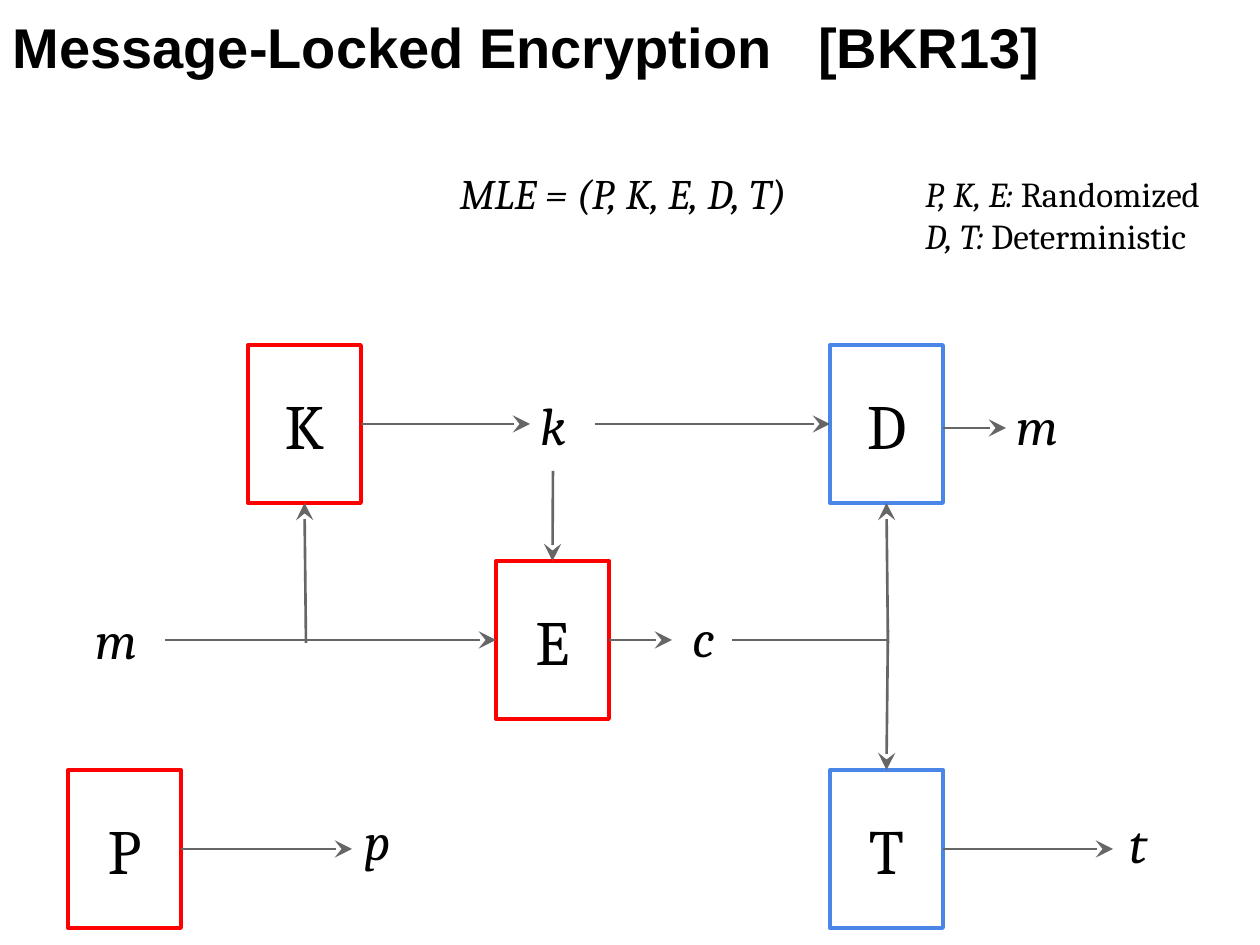
from lxml import etree
from pptx import Presentation, util as u
from pptx.dml.color import RGBColor
from pptx.enum import shapes, text
from pptx.oxml import ns

PX_PER_INCH = 126
BLACK, GREY, RED, BLUE = "000000", "666666", "FF0000", "4A86E8"
BLOCK_WIDTH, BLOCK_HEIGHT = 113, 158
LABEL_HEIGHT = 93
TOP, LEFT, BOTTOM, RIGHT = range(4)


def px(*lengths):
    return [u.Inches(length / PX_PER_INCH) for length in lengths]


def color(value):
    return RGBColor.from_string(value)


def add_run(paragraph, words, size, font="Cambria", bold=False, italic=False):
    run = paragraph.add_run()
    run.text = words
    run.font.size = u.Pt(size)
    run.font.name = font
    run.font.bold = bold
    run.font.italic = italic
    run.font.color.rgb = color(BLACK)


def format_frame(frame, anchor=text.MSO_ANCHOR.MIDDLE):
    frame.word_wrap = True
    frame.auto_size = text.MSO_AUTO_SIZE.NONE
    frame.vertical_anchor = anchor
    for side in ("left", "top", "right", "bottom"):
        setattr(frame, f"margin_{side}", u.Inches(0.1))


def add_text(slide, box, lines, size, align=text.PP_ALIGN.CENTER):
    """Each line is a list of (words, italic) pairs."""
    frame = slide.shapes.add_textbox(*px(*box)).text_frame
    format_frame(frame)
    for index, line in enumerate(lines):
        paragraph = frame.add_paragraph() if index else frame.paragraphs[0]
        paragraph.alignment = align
        for words, italic in line:
            add_run(paragraph, words, size, italic=italic)


def add_block(slide, box, letter, outline):
    block = slide.shapes.add_shape(shapes.MSO_SHAPE.RECTANGLE, *px(*box))
    block.shadow.inherit = False
    block.fill.background()
    block.line.color.rgb = color(outline)
    block.line.width = u.Pt(2.25)
    format_frame(block.text_frame)
    paragraph = block.text_frame.paragraphs[0]
    paragraph.alignment = text.PP_ALIGN.CENTER
    add_run(paragraph, letter, 36)
    return block


def add_line(slide, start, end, arrow=True):
    line = slide.shapes.add_connector(
        shapes.MSO_CONNECTOR.STRAIGHT, *px(*start, *end))
    line.line.color.rgb = color(GREY)
    line.line.width = u.Pt(1.5)
    if arrow:
        etree.SubElement(line.line._get_or_add_ln(), ns.qn("a:tailEnd"),
                         type="stealth", w="lg", len="lg")
    etree.SubElement(line._element.spPr, ns.qn("a:effectLst"))
    return line


def place_title(slide, box):
    title = slide.shapes.title
    title.left, title.top, title.width, title.height = px(*box)
    format_frame(title.text_frame, text.MSO_ANCHOR.TOP)
    paragraph = title.text_frame.paragraphs[0]
    paragraph.alignment = text.PP_ALIGN.LEFT
    add_run(paragraph, "Message-Locked Encryption   [BKR13]", 32, "Arial", bold=True)


def place_definition(slide, box):
    left, top, width, height = box
    add_text(slide, (left, top + 55, 418, LABEL_HEIGHT),
             [[("MLE = (P, K, E, D, T)", True)]], 24)
    add_text(slide, (left + 499, top, width - 499, height),
             [[("P, K, E: ", True), ("Randomized", False)],
              [("D, T: ", True), ("Deterministic", False)]],
             20, text.PP_ALIGN.LEFT)


def place_diagram(slide, origin):
    left, top = origin

    def at(x, y):
        return left + x, top + y

    corners = {"P": (0, 425, RED), "E": (428, 216, RED), "D": (762, 0, BLUE),
               "T": (762, 425, BLUE), "K": (180, 0, RED)}
    blocks = {
        letter: add_block(slide, (*at(x, y), BLOCK_WIDTH, BLOCK_HEIGHT), letter, outline)
        for letter, (x, y, outline) in corners.items()}

    labels = [("m", 0, 247, 97), ("c", 597, 245, 77), ("k", 447, 33, 77),
              ("p", 271, 448, 77), ("t", 1032, 451, 77), ("m", 931, 33, 77)]
    for letter, x, y, width in labels:
        add_text(slide, (*at(x, y), width, LABEL_HEIGHT), [[(letter, True)]], 30)

    key_row, cipher_row, tag_row = (
        corners[letter][1] + BLOCK_HEIGHT // 2 for letter in "KEP")

    outputs = [("K", 462, key_row), ("E", 604, cipher_row),
               ("P", 284, tag_row), ("T", 1045, tag_row)]
    for letter, x, y in outputs:
        add_line(slide, at(x, y), at(x, y)).begin_connect(blocks[letter], RIGHT)

    inputs = [("E", LEFT, 97, cipher_row), ("D", LEFT, 527, key_row),
              ("D", BOTTOM, 820, cipher_row + 3), ("T", TOP, 820, cipher_row - 10),
              ("K", BOTTOM, 238, cipher_row + 3), ("E", TOP, 485, 126)]
    for letter, side, x, y in inputs:
        add_line(slide, at(x, y), at(x, y)).end_connect(blocks[letter], side)

    add_line(slide, at(664, cipher_row), at(821, cipher_row), arrow=False)
    add_line(slide, at(875, 83), at(938, 83))


def main():
    presentation = Presentation()
    presentation.slide_width, presentation.slide_height = px(1260, 945)
    slide = presentation.slides.add_slide(presentation.slide_layouts[5])
    place_title(slide, (0, 0, 1260, 158))
    place_definition(slide, (414, 91, 851, 247))
    place_diagram(slide, (68, 345))
    presentation.save("out.pptx")


if __name__ == "__main__":
    main()
